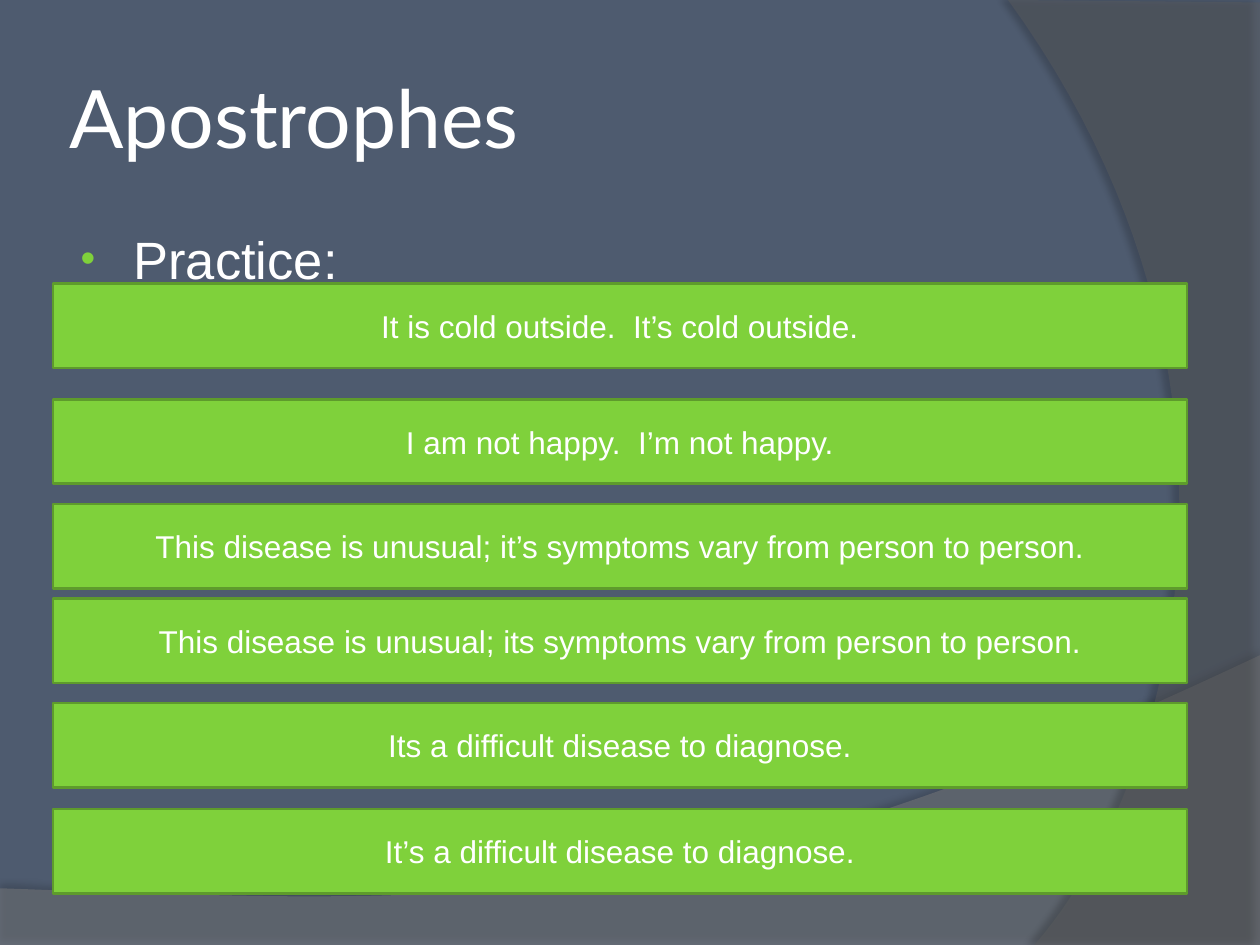
from dataclasses import dataclass

from lxml import etree
from pptx import Presentation
from pptx import util as u
from pptx.dml.color import RGBColor
from pptx.enum import shapes, text
from pptx.oxml import parse_xml
from pptx.oxml.ns import nsdecls, qn


@dataclass(frozen=True)
class Theme:
    background: str = "4E5B6F"
    sweep: str = "7F7F7F"
    arc: str = "5E5E5E"
    shadow: str = "000000"
    accent: str = "7FD13B"
    accent_line: str = "5E9B2C"
    ink: str = "FFFFFF"
    heading_font: str = "Lato"
    body_font: str = "Arial"
    title_size: int = 46
    body_size: int = 30
    box_size: int = 18


theme = Theme()


def write_text(frame, words, *, size, font=theme.body_font,
               align=text.PP_ALIGN.LEFT, anchor=text.MSO_ANCHOR.MIDDLE):
    frame.word_wrap = True
    frame.auto_size = text.MSO_AUTO_SIZE.NONE
    frame.vertical_anchor = anchor
    para = frame.paragraphs[0]
    para.alignment = align
    span = para.add_run()
    span.text = words
    span.font.size = u.Pt(size)
    span.font.name = font
    span.font.color.rgb = RGBColor.from_string(theme.ink)
    return para


def add_panel(page, corners, curve, *, color, opacity, shade, blur, distance, angle):
    """Draw straight corners followed by one cubic curve, with a soft shadow."""
    steps = 48
    points = list(corners)
    for step in range(steps + 1):
        t = step / steps
        weights = ((1 - t) ** 3, 3 * t * (1 - t) ** 2, 3 * t ** 2 * (1 - t), t ** 3)
        points.append(tuple(sum(w * p[axis] for w, p in zip(weights, curve))
                            for axis in (0, 1)))
    points = [(u.Inches(x), u.Inches(y)) for x, y in points]
    builder = page.shapes.build_freeform(*points[0])
    builder.add_line_segments(points[1:], close=True)
    panel = builder.convert_to_shape()
    panel.fill.solid()
    panel.fill.fore_color.rgb = RGBColor.from_string(color)
    panel.line.fill.background()
    panel.shadow.inherit = False
    properties = panel._element.spPr
    tint = properties.find(qn("a:solidFill")).find(qn("a:srgbClr"))
    etree.SubElement(tint, qn("a:alpha"), val=str(opacity * 1000))
    properties.find(qn("a:effectLst")).append(parse_xml(
        f'<a:outerShdw {nsdecls("a")} blurRad="{u.Pt(blur)}" dist="{u.Pt(distance)}" '
        f'dir="{angle * 60000}" algn="ctr" rotWithShape="0">'
        f'<a:srgbClr val="{theme.shadow}"><a:alpha val="{shade * 1000}"/></a:srgbClr>'
        f'</a:outerShdw>'))


deck = Presentation()
deck.slide_width, deck.slide_height = u.Inches(10), u.Inches(7.5)
page = deck.slides.add_slide(deck.slide_layouts[1])
title, body = page.placeholders

# Background with two translucent panels
page.background.fill.solid()
page.background.fill.fore_color.rgb = RGBColor.from_string(theme.background)
add_panel(page, [(0, 7.05), (0, 7.51), (10, 7.51)],
          [(10, 5.2), (5.59, 7.29), (3.91, 7.19), (0, 7.05)],
          color=theme.sweep, opacity=45, shade=35, blur=4, distance=3.5, angle=270)
add_panel(page, [(10, 0.02), (10, 7.5)],
          [(8.21, 7.5), (9.35, 6.19), (10.18, 3), (8, 0)],
          color=theme.arc, opacity=40, shade=45, blur=4, distance=4, angle=180)

# Title and body, brought in front of the panels
for holder, top, height in ((title, 0.3, 1.25), (body, 1.75, 4.95)):
    page.shapes._spTree.append(holder._element)
    holder.left, holder.top = u.Inches(0.5), u.Inches(top)
    holder.width, holder.height = u.Inches(8.17), u.Inches(height)

frame = title.text_frame
frame.margin_left = frame.margin_right = u.Inches(0.05)
frame.margin_top = frame.margin_bottom = u.Inches(0.05)
write_text(frame, "Apostrophes", size=theme.title_size, font=theme.heading_font)

para = write_text(body.text_frame, "Practice:", size=theme.body_size,
                  anchor=text.MSO_ANCHOR.TOP)
para.space_before = u.Pt(6)
bullet = para._p.get_or_add_pPr()
bullet.set("marL", str(u.Inches(0.46)))
bullet.set("indent", str(u.Inches(-0.42)))
color = etree.SubElement(bullet, qn("a:buClr"))
etree.SubElement(color, qn("a:srgbClr"), val=theme.accent)
etree.SubElement(bullet, qn("a:buSzPct"), val="80000")
etree.SubElement(bullet, qn("a:buFont"), typeface=theme.body_font)
etree.SubElement(bullet, qn("a:buChar"), char="•")

# Practice sentences
sentences = (
    (2.25, "It is cold outside.  It’s cold outside."),
    (3.17, "I am not happy.  I’m not happy."),
    (4, "This disease is unusual; it’s symptoms vary from person to person."),
    (4.75, "This disease is unusual; its symptoms vary from person to person."),
    (5.58, "Its a difficult disease to diagnose."),
    (6.42, "It’s a difficult disease to diagnose."),
)
for top, sentence in sentences:
    box = page.shapes.add_shape(shapes.MSO_SHAPE.RECTANGLE, u.Inches(0.42),
                                u.Inches(top), u.Inches(9), u.Inches(0.67))
    box.shadow.inherit = False
    box.fill.solid()
    box.fill.fore_color.rgb = RGBColor.from_string(theme.accent)
    box.line.color.rgb = RGBColor.from_string(theme.accent_line)
    box.line.width = u.Pt(1.5)
    write_text(box.text_frame, sentence, size=theme.box_size,
               align=text.PP_ALIGN.CENTER)

deck.save("out.pptx")
